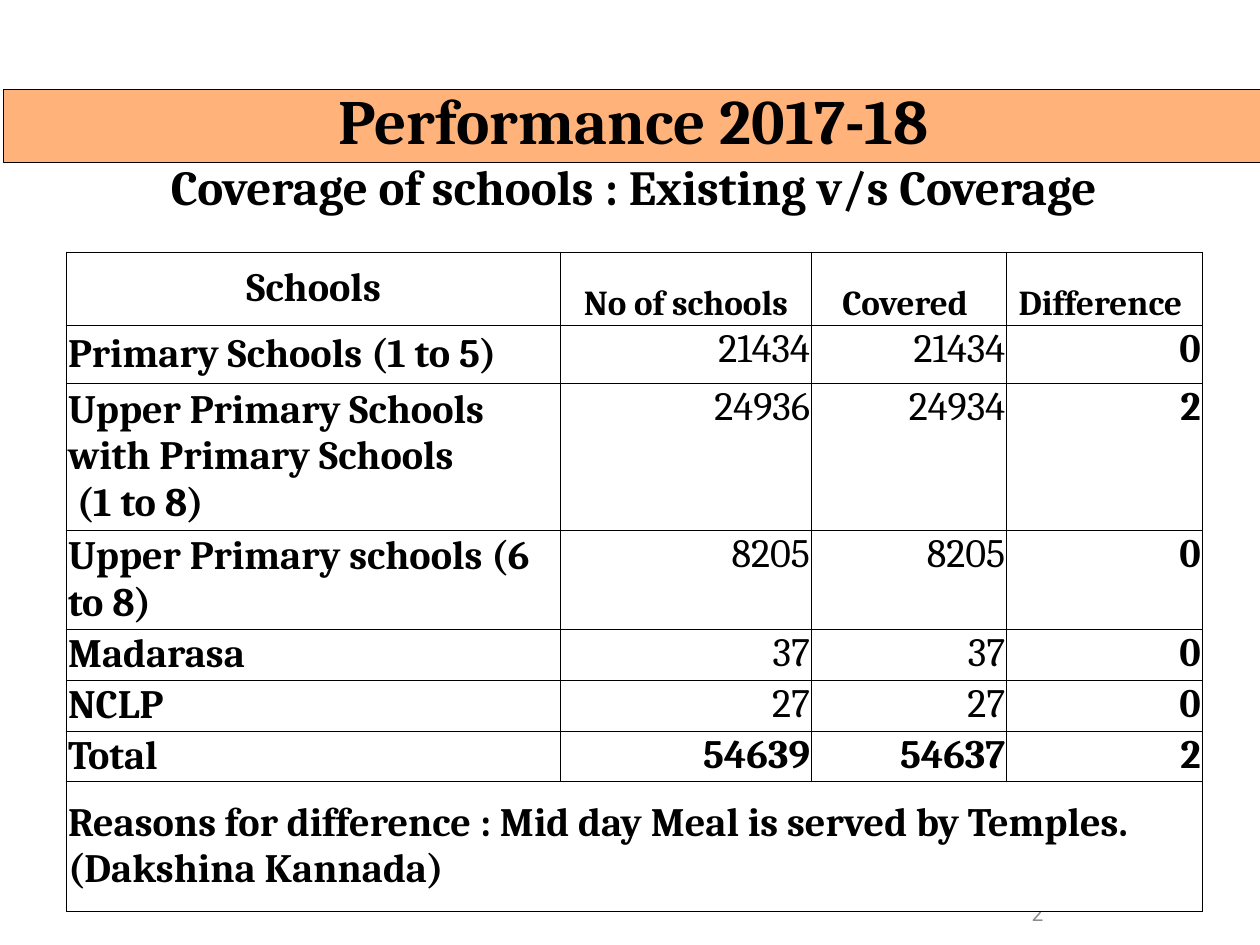
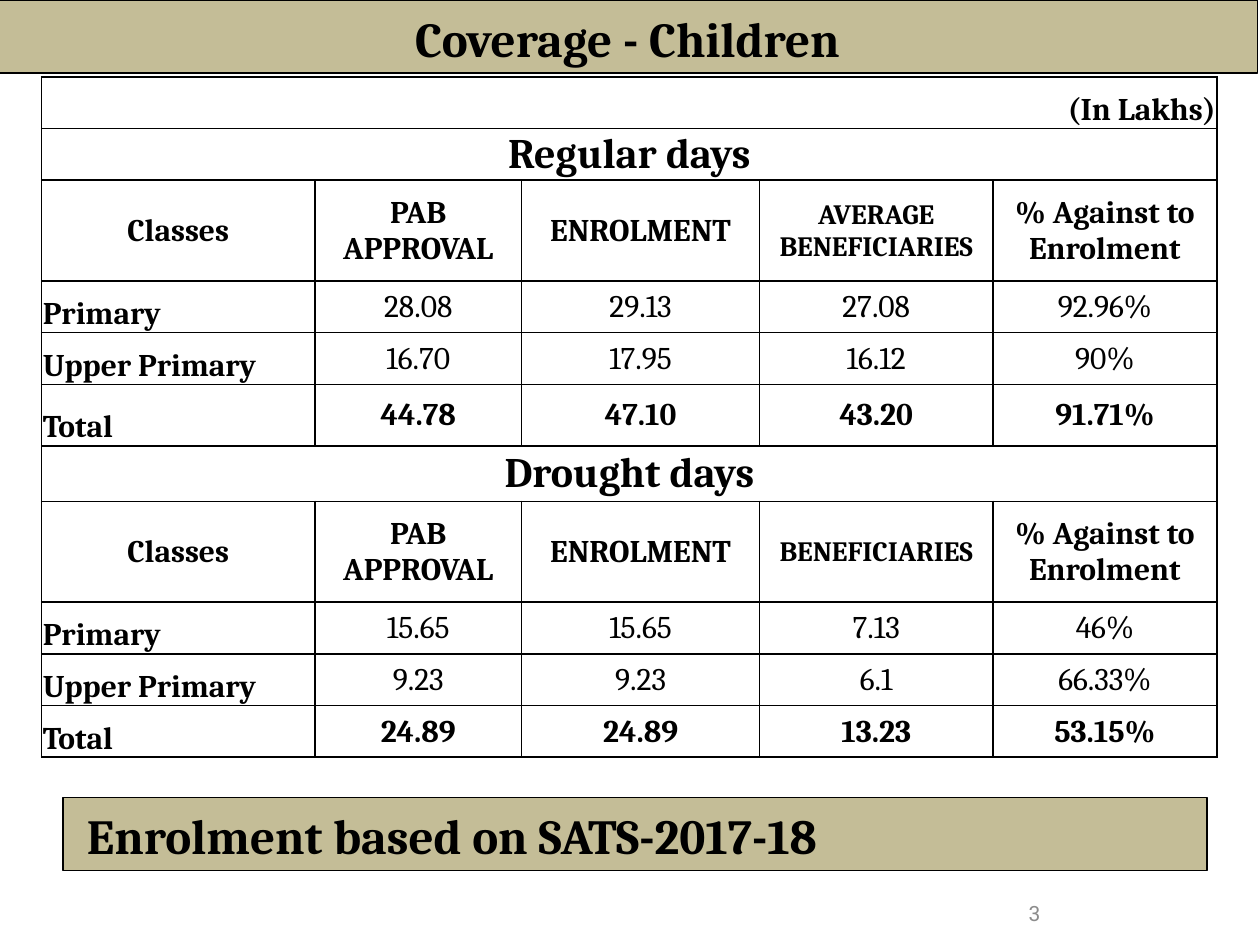
from dataclasses import dataclass

from lxml.etree import SubElement
from pptx import Presentation
from pptx.dml.color import RGBColor
from pptx.enum.shapes import MSO_SHAPE as Shape
from pptx.enum.text import MSO_ANCHOR as Anchor, PP_ALIGN as Align
from pptx.oxml.ns import qn
from pptx.util import Inches, Pt


@dataclass(frozen=True)
class Theme:
    font: str = "Cambria"
    number_font: str = "Roboto"
    ink: str = "000000"
    paper: str = "FFFFFF"
    orange: str = "FFB37A"
    khaki: str = "C4BD97"
    grey: str = "8C8C8C"
    title: int = 36
    heading: int = 28
    section: int = 24
    schools: int = 23
    schools_header: int = 20
    children: int = 18
    children_small: int = 16
    number: int = 12


THEME = Theme()


class Deck:
    """Holds the style and the current slide."""

    def __init__(self, theme):
        self.theme = theme
        self.prs = Presentation()
        self.prs.slide_width, self.prs.slide_height = Inches(10), Inches(7.5)

    def slide(self):
        self.s = self.prs.slides.add_slide(self.prs.slide_layouts[6])

    def style(self, p, size, bold=True, align=Align.LEFT, color=None, font=None):
        p.alignment = align
        for r in p.runs:
            r.font.size, r.font.bold = Pt(size), bold
            r.font.name = font or self.theme.font
            r.font.color.rgb = RGBColor.from_string(color or self.theme.ink)

    def text(self, at, lines, anchor=Anchor.MIDDLE, **look):
        """Text box; lines is a list of (text, size)."""
        tf = self.s.shapes.add_textbox(*map(Inches, at)).text_frame
        tf.word_wrap, tf.vertical_anchor = True, anchor
        tf.text = "\n".join(line for line, _ in lines)
        for p, (_, size) in zip(tf.paragraphs, lines):
            self.style(p, size, **look)

    def page_number(self, at, number, align):
        self.text(at, [(number, self.theme.number)], bold=False, align=align,
                  color=self.theme.grey, font=self.theme.number_font)

    def band(self, at, fill, text="", align=Align.CENTER, indent=0.1):
        sp = self.s.shapes.add_shape(Shape.RECTANGLE, *map(Inches, at))
        sp.shadow.inherit = False
        sp.fill.solid()
        sp.fill.fore_color.rgb = RGBColor.from_string(fill)
        sp.line.color.rgb = RGBColor.from_string(self.theme.ink)
        sp.line.width = Pt(0.75)
        if text:
            tf = sp.text_frame
            tf.text, tf.vertical_anchor = text, Anchor.BOTTOM
            tf.margin_left = Inches(indent)
            self.style(tf.paragraphs[0], self.theme.heading, align=align)

    def border(self, cell, width):
        tc_pr = cell._tc.get_or_add_tcPr()
        for side in ("lnL", "lnR", "lnT", "lnB"):
            ln = SubElement(tc_pr, qn(f"a:{side}"), w=str(Pt(width)))
            fill = SubElement(ln, qn("a:solidFill"))
            SubElement(fill, qn("a:srgbClr"), val=self.theme.ink)

    def table(self, at, widths, heights, rows, look, line, bottom):
        """Rows of one text span the table; look(row, column) gives a cell's style."""
        size = (sum(widths), sum(heights))
        table = self.s.shapes.add_table(len(rows), len(widths),
                                        *map(Inches, at + size)).table
        table.first_row = table.horz_banding = False
        for column, width in zip(table.columns, widths):
            column.width = Inches(width)
        for i, (row, height) in enumerate(zip(rows, heights)):
            table.rows[i].height = Inches(height)
            if len(row) == 1:
                table.cell(i, 0).merge(table.cell(i, len(widths) - 1))
            for j in range(len(widths)):
                cell = table.cell(i, j)
                self.border(cell, line)
                cell.fill.solid()
                cell.fill.fore_color.rgb = RGBColor.from_string(self.theme.paper)
                cell.margin_left = cell.margin_right = cell.margin_top = Inches(0.01)
                cell.margin_bottom = Inches(bottom)
                if j < len(row):
                    size, bold, align, cell.vertical_anchor = look(row, j)
                    p = cell.text_frame.paragraphs[0]
                    p.text = row[j]
                    self.style(p, size, bold, align)


# Schools table
SCHOOLS = [
    ["Schools", "No of schools", "Covered ", "Difference "],
    ["Primary Schools (1 to 5)", "21434", "21434", "0"],
    ["Upper Primary Schools with Primary Schools\v (1 to 8)", "24936", "24934", "2"],
    ["Upper Primary schools (6 to 8)", "8205", "8205", "0"],
    ["Madarasa", "37", "37", "0"],
    ["NCLP", "27", "27", "0"],
    ["Total", "54639", "54637", "2"],
    ["Reasons for difference : Mid day Meal is served by Temples."
     "(Dakshina Kannada)"],
]


def schools_look(row, j):
    if row[0] == "Schools":
        if j == 0:
            return THEME.schools, True, Align.CENTER, Anchor.MIDDLE
        return THEME.schools_header, True, Align.CENTER, Anchor.BOTTOM
    if j == 0:
        return THEME.schools, True, Align.LEFT, Anchor.MIDDLE
    return THEME.schools, j == 3 or row[0] == "Total", Align.RIGHT, Anchor.TOP


# Children table
def children_header(beneficiaries):
    return ["Classes", "PAB APPROVAL", "ENROLMENT", beneficiaries,
            "% Against to Enrolment"]


CHILDREN = [
    ["(In Lakhs)"],
    ["Regular days"],
    children_header("AVERAGE BENEFICIARIES"),
    ["Primary", "28.08", "29.13", "27.08", "92.96%"],
    ["Upper Primary", "16.70", "17.95", "16.12", "90%"],
    ["Total", "44.78", "47.10", "43.20", "91.71%"],
    ["Drought days"],
    children_header("BENEFICIARIES"),
    ["Primary", "15.65", "15.65", "7.13", "46%"],
    ["Upper Primary", "9.23", "9.23", "6.1", "66.33%"],
    ["Total", "24.89", "24.89", "13.23", "53.15%"],
]


def children_look(row, j):
    if row[0] == "(In Lakhs)":
        return THEME.children, True, Align.RIGHT, Anchor.BOTTOM
    if len(row) == 1:
        return THEME.section, True, Align.CENTER, Anchor.MIDDLE
    if row[0] == "Classes":
        size = THEME.children_small if j == 3 else THEME.children
        return size, True, Align.CENTER, Anchor.MIDDLE
    if j == 0:
        return THEME.children, True, Align.LEFT, Anchor.BOTTOM
    return THEME.children, row[0] == "Total", Align.CENTER, Anchor.MIDDLE


def main():
    deck = Deck(THEME)

    # Slide 1: coverage of schools
    deck.slide()
    deck.page_number((8.05, 7.1, 0.33, 0.29), "2", Align.RIGHT)
    deck.band((0.03, 0.71, 10, 0.58), THEME.orange)
    deck.text((0.03, 0.58, 10, 1.18),
              [("Performance 2017-18", THEME.title),
               ("Coverage of schools : Existing v/s Coverage", THEME.heading)],
              anchor=Anchor.BOTTOM, align=Align.CENTER)
    deck.table((0.53, 2), [3.92, 1.99, 1.55, 1.55],
               [0.58, 0.46, 1.09, 0.72, 0.4, 0.4, 0.4, 1.03],
               SCHOOLS, schools_look, line=0.5, bottom=0.01)

    # Slide 2: coverage of children
    deck.slide()
    deck.page_number((7.17, 7, 2.08, 0.5), "3", Align.CENTER)
    deck.table((0.33, 0.61), [2.17, 1.64, 1.89, 1.85, 1.78],
               [0.41, 0.41, 0.8, 0.41, 0.41, 0.49, 0.44, 0.8, 0.41, 0.41, 0.41],
               CHILDREN, children_look, line=1, bottom=0)
    deck.band((-0.02, 0, 10, 0.58), THEME.khaki, "Coverage - Children")
    deck.band((0.5, 6.33, 9.08, 0.58), THEME.khaki,
              "Enrolment based on SATS-2017-18", Align.LEFT, indent=0.19)

    deck.prs.save("out.pptx")


if __name__ == "__main__":
    main()
